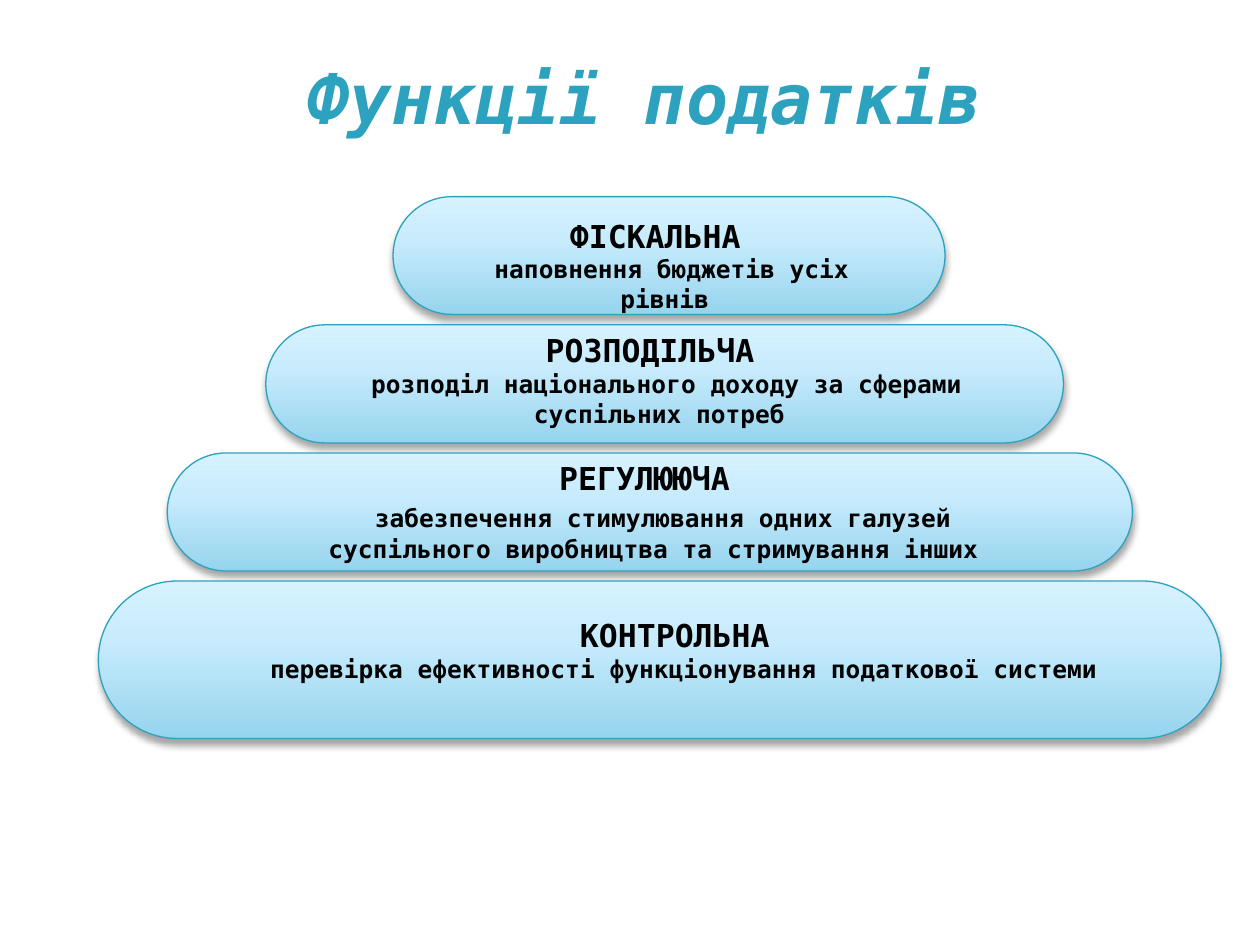
"""Build a slide showing the four functions of taxes as a stepped pyramid."""
from copy import deepcopy

from pptx import Presentation
from pptx.dml.color import RGBColor
from pptx.enum.shapes import MSO_SHAPE
from pptx.enum.text import MSO_ANCHOR, PP_ALIGN
from pptx.oxml import parse_xml
from pptx.oxml.ns import nsdecls
from pptx.util import Pt

COLORS = {"accent": "2DA2BF", "text": "000000", "shadow": "000000",
          "bottom": "96D4EE", "middle": "C9ECFC", "top": "D7F2FF"}
FONT = "DejaVu Sans Mono"
FIRST_TOP, PITCH = 112.4, 73.2


def add_run(paragraph, text, size, color, italic=None):
    """Add one bold run to a centred paragraph."""
    paragraph.alignment = PP_ALIGN.CENTER
    run = paragraph.add_run()
    run.text = text
    run.font.name = FONT
    run.font.size = Pt(size)
    run.font.bold = True
    run.font.italic = italic
    run.font.color.rgb = RGBColor.from_string(COLORS[color])


def style_bar(shape):
    """Give a bar its rounded ends, gradient, outline and shadow."""
    shape.adjustments[0] = 0.5
    shape.fill.gradient()
    stop_list = shape._element.spPr.find(".//{*}gsLst")
    stop_list.insert(1, deepcopy(stop_list[0]))
    stops = shape.fill.gradient_stops
    for stop, position, color in zip(stops, (0, 0.65, 1), ("bottom", "middle", "top")):
        stop.position = position
        stop.color.rgb = RGBColor.from_string(COLORS[color])
    shape.fill.gradient_angle = 90
    shape.line.color.rgb = RGBColor.from_string(COLORS["accent"])
    shape.line.width = Pt(0.75)
    shape.shadow.inherit = False
    shape._element.spPr.find("{*}effectLst").append(parse_xml(
        f'<a:outerShdw {nsdecls("a")} blurRad="{Pt(4)}" dist="{Pt(3)}" dir="5400000" '
        f'rotWithShape="0"><a:srgbClr val="{COLORS["shadow"]}">'
        '<a:alpha val="35000"/></a:srgbClr></a:outerShdw>'))


presentation = Presentation()
presentation.slide_width, presentation.slide_height = Pt(720), Pt(540)
slide = presentation.slides.add_slide(presentation.slide_layouts[5])

title = slide.shapes.title
title.left, title.top, title.width, title.height = Pt(73.4), Pt(30), Pt(589), Pt(50.4)
title.text_frame.vertical_anchor = MSO_ANCHOR.MIDDLE
add_run(title.text_frame.paragraphs[0], "Функції податків", 40, "accent", True)

functions = [
    ((224.6, 315.4, 67.3), (241.9, 120.2, 275.8, 61.2), "ФІСКАЛЬНА ",
     [(" наповнення бюджетів усіх рівнів", 14)]),
    ((151.9, 455.8, 67.5), (180, 185.8, 393.8, 63.4), "РОЗПОДІЛЬЧА ",
     [(" розподіл національного доходу за сферами суспільних потреб", 14)]),
    ((95.6, 551.5, 67.5), (150.5, 258.5, 446.4, 67.7), "РЕГУЛЮЮЧА ",
     [(" ", 18), ("забезпечення стимулювання одних галузей "
                 "суспільного виробництва та стримування інших", 14)]),
    ((56.2, 641.5, 90), (118.1, 348.5, 545.8, 46.1), "КОНТРОЛЬНА ",
     [("перевірка ефективності функціонування податкової системи", 14)]),
]

for index, ((left, width, height), text_area, name, description) in enumerate(functions):
    group = slide.shapes.add_group_shape()
    bar = group.shapes.add_shape(
        MSO_SHAPE.ROUNDED_RECTANGLE,
        Pt(left), Pt(FIRST_TOP + index * PITCH), Pt(width), Pt(height))
    style_bar(bar)
    text_frame = group.shapes.add_textbox(*map(Pt, text_area)).text_frame
    text_frame.word_wrap = True
    add_run(text_frame.paragraphs[0], name, 18, "text")
    paragraph = text_frame.add_paragraph()
    for text, size in description:
        add_run(paragraph, text, size, "text")

presentation.save("out.pptx")
